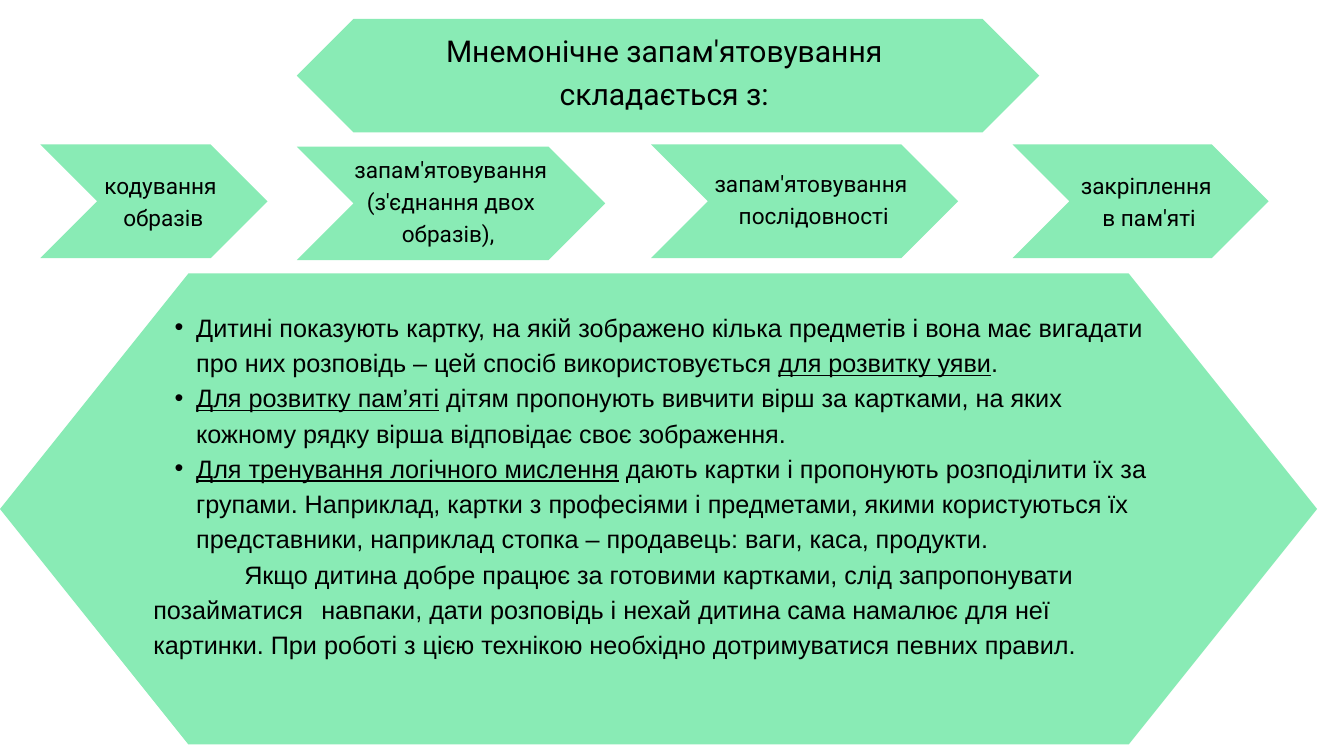
from dataclasses import dataclass

from lxml.etree import SubElement
from pptx import Presentation
from pptx.dml.color import RGBColor
from pptx.enum.shapes import MSO_SHAPE
from pptx.enum.text import PP_ALIGN
from pptx.oxml.ns import qn
from pptx.util import Pt


@dataclass(frozen=True)
class Theme:
    green: RGBColor = RGBColor(0x89, 0xEB, 0xB5)
    black: RGBColor = RGBColor(0, 0, 0)
    heading_font: str = "Roboto"
    body_font: str = "Arial"
    title_size: float = 32.2
    step_size: float = 24.2
    body_size: float = 27
    leading: float = 1.4


theme = Theme()
prs = Presentation()
prs.slide_width, prs.slide_height = Pt(1440), Pt(810)
s = prs.slides.add_slide(prs.slide_layouts[6])


def add_panel(kind, box, point):
    sp = s.shapes.add_shape(kind, *map(Pt, box))
    sp.adjustments[0] = point
    sp.shadow.inherit = False
    sp.fill.solid()
    sp.fill.fore_color.rgb = theme.green
    sp.line.fill.background()


def add_text(box, paragraphs, font, size, align):
    """Each paragraph is a list of (text, underlined) runs."""
    tf = s.shapes.add_textbox(*map(Pt, box)).text_frame
    tf.word_wrap = True
    tf.margin_left = tf.margin_right = tf.margin_top = tf.margin_bottom = 0
    for i, runs in enumerate(paragraphs):
        p = tf.paragraphs[0] if i == 0 else tf.add_paragraph()
        p.alignment = align
        p.line_spacing = Pt(round(size * theme.leading, 1))
        for text, underlined in runs:
            r = p.add_run()
            r.text = text
            r.font.name, r.font.size = font, Pt(size)
            r.font.color.rgb = theme.black
            r.font.underline = underlined
    return tf


# Title
add_panel(MSO_SHAPE.HEXAGON, (318, 20.2, 795.6, 121.7), 0.5)
add_text((447.8, 28.8, 535.7, 87.8),
         [[("Мнемонічне запам'ятовування ", False)], [("складається з: ", False)]],
         theme.heading_font, theme.title_size, PP_ALIGN.CENTER)

# Four steps: chevron left, top, width; label box; label lines
steps = [
    ((43.2, 154.8, 243.4), (53.3, 179.3, 243.4, 66.2), ["кодування ", "образів"]),
    ((318, 157, 330.5), (361.4, 162.7, 243.4, 103),
     ["запам'ятовування (з'єднання двох образів), "]),
    ((697.7, 154.8, 329), (753.1, 177.1, 237.6, 66.2), ["запам'ятовування ", "послідовності"]),
    ((1085, 154.8, 274.3), (1149.1, 179.3, 164.2, 66.2), ["закріплення ", "в пам'яті"]),
]
for chevron, label, lines in steps:
    add_panel(MSO_SHAPE.CHEVRON, (*chevron, 121.7), 0.5)
    add_text(label, [[(line, False)] for line in lines],
             theme.heading_font, theme.step_size, PP_ALIGN.CENTER)

# Explanation
add_panel(MSO_SHAPE.HEXAGON, (0, 293, 1411.2, 504.7), 0.4)
explanation = [
    [("Дитині показують картку, на якій зображено кілька предметів і вона має вигадати "
      "про них розповідь – цей спосіб використовується ", False),
     ("для розвитку уяви", True), (".", False)],
    [("Для розвитку пам’яті", True),
     (" дітям пропонують вивчити вірш за картками, на яких кожному рядку вірша "
      "відповідає своє зображення.", False)],
    [("Для тренування логічного мислення", True),
     (" дають картки і пропонують розподілити їх за групами. Наприклад, картки з професіями "
      "і предметами, якими користуються їх представники, наприклад стопка – продавець: "
      "ваги, каса, продукти.", False)],
    [("Якщо дитина добре працює за готовими картками, слід запропонувати позайматися\t"
      "навпаки, дати розповідь і нехай дитина сама намалює для неї картинки. При роботі "
      "з цією технікою необхідно дотримуватися певних правил.", False)],
]
tf = add_text((164.2, 329, 1067, 415.4), explanation,
              theme.body_font, theme.body_size, PP_ALIGN.LEFT)

# Bullets, then the first-line indent and tab stop of the closing paragraph
*bulleted, closing = tf.paragraphs
for p in bulleted:
    pPr = p._p.get_or_add_pPr()
    pPr.set("marL", str(Pt(46)))
    pPr.set("indent", str(Pt(-23)))
    SubElement(pPr, qn("a:buFont"), typeface=theme.body_font)
    SubElement(pPr, qn("a:buChar"), char="•")
pPr = closing._p.get_or_add_pPr()
pPr.set("marL", "0")
pPr.set("indent", str(Pt(97.5)))
tabs = SubElement(pPr, qn("a:tabLst"))
SubElement(tabs, qn("a:tab"), pos=str(Pt(198)), algn="l")

prs.save("out.pptx")
